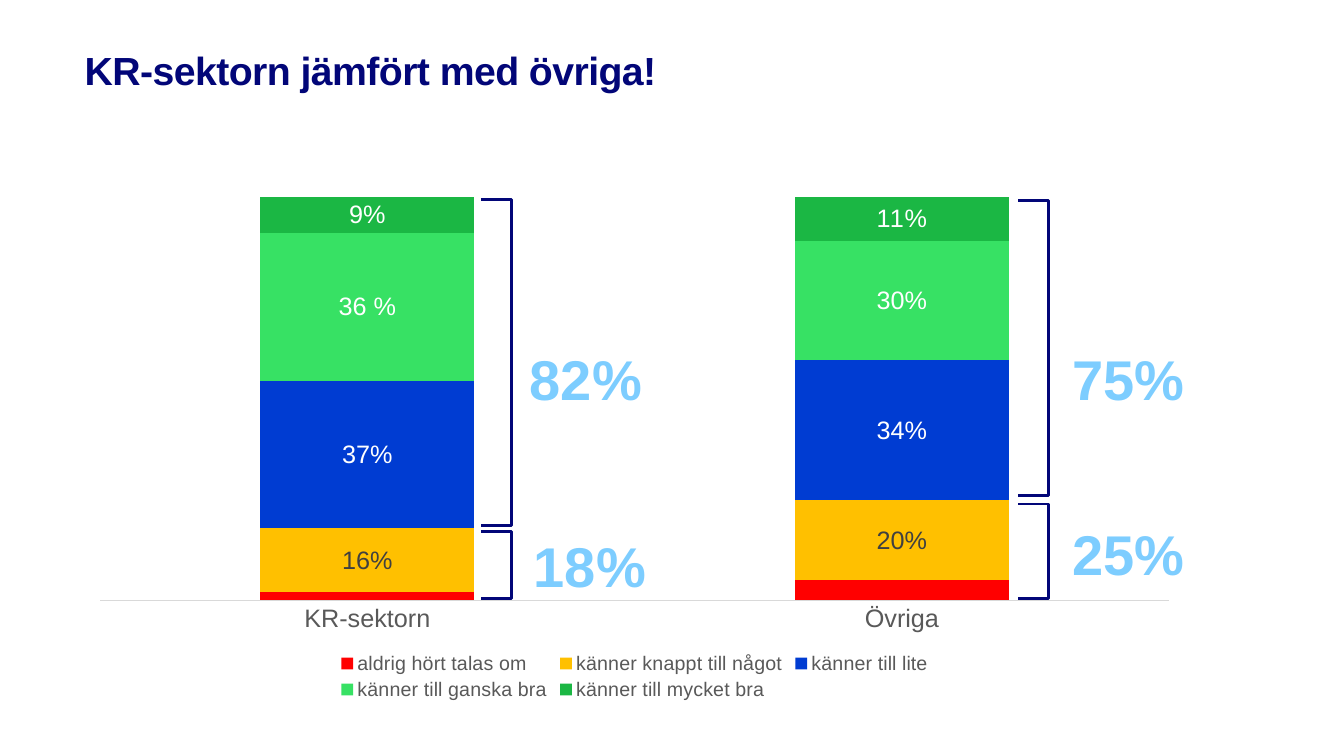
from lxml import etree
from pptx import Presentation
from pptx.chart.data import CategoryChartData
from pptx.dml.color import RGBColor
from pptx.enum.chart import XL_CHART_TYPE, XL_LABEL_POSITION, XL_LEGEND_POSITION, XL_TICK_MARK
from pptx.enum.shapes import MSO_SHAPE
from pptx.enum.text import MSO_ANCHOR, PP_ALIGN
from pptx.oxml.ns import qn
from pptx.util import Inches, Pt

STACKED = XL_CHART_TYPE.COLUMN_STACKED_100
LABEL_CENTER = XL_LABEL_POSITION.CENTER
LEGEND_BOTTOM = XL_LEGEND_POSITION.BOTTOM
NO_TICK = XL_TICK_MARK.NONE
BRACKET = MSO_SHAPE.RIGHT_BRACKET
TOP, MIDDLE = MSO_ANCHOR.TOP, MSO_ANCHOR.MIDDLE
LEFT, CENTER = PP_ALIGN.LEFT, PP_ALIGN.CENTER

FONT = "Arial"
NAVY, SKY, GREY, WHITE = "020678", "7DCDFF", "595959", "FFFFFF"
CATEGORIES = ["KR-sektorn", "Övriga"]
# name, values, fill, label colour, label wording by point
SERIES = [
    ("aldrig hört talas om", (0.02, 0.05), "FF0000", None, {}),
    ("känner knappt till något", (0.16, 0.20), "FFC000", "404040", {}),
    ("känner till lite", (0.37, 0.35), "003CD2", WHITE, {1: "34%"}),
    ("känner till ganska bra", (0.37, 0.30), "37E164", WHITE, {0: "36 %"}),
    ("känner till mycket bra", (0.09, 0.11), "1BB744", WHITE, {}),
]
PLOT_LAYOUT = {"layoutTarget": "inner", "xMode": "edge", "yMode": "edge",
               "x": 0.014, "y": 0.029, "w": 0.972, "h": 0.772}
# bracket box, total, box of the total
TOTALS = [
    ((4.77, 1.98, 0.3, 3.23), "82%", (5.11, 3.25, 1.4, 1)),
    ((4.77, 5.27, 0.3, 0.67), "18%", (5.15, 5.27, 1.4, 0.67)),
    ((10.1, 1.99, 0.3, 2.93), "75%", (10.49, 3.25, 1.4, 1)),
    ((10.1, 5, 0.3, 0.94), "25%", (10.49, 5.03, 1.4, 0.92)),
]


def color(value):
    return RGBColor.from_string(value)


def inches(box):
    return [Inches(length) for length in box]


def format_font(font, size, value, **extras):
    for name, setting in {"name": FONT, "size": Pt(size), **extras}.items():
        setattr(font, name, setting)
    font.color.rgb = color(value)


def add_text(slide, box, text, size, value, anchor=MIDDLE, align=CENTER, wrap=False):
    frame = slide.shapes.add_textbox(*inches(box)).text_frame
    settings = {"margin_left": 0, "margin_right": 0, "margin_top": 0, "margin_bottom": 0,
                "word_wrap": wrap, "vertical_anchor": anchor}
    for name, setting in settings.items():
        setattr(frame, name, setting)
    paragraph = frame.paragraphs[0]
    paragraph.alignment = align
    run = paragraph.add_run()
    run.text = text
    format_font(run.font, size, value, bold=True)
    return run


def add_title(slide, box):
    run = add_text(slide, box, "KR-sektorn jämfört med övriga!", 28, NAVY, TOP, LEFT, True)
    run.font._element.set("spc", "-40")


def label_series(series, label_color, wording):
    labels = series.data_labels
    settings = {"show_value": True, "position": LABEL_CENTER,
                "number_format": "0%", "number_format_is_linked": False}
    for name, setting in settings.items():
        setattr(labels, name, setting)
    format_font(labels.font, 18, label_color)
    for index, text in wording.items():
        label = series.points[index].data_label
        run = label.text_frame.paragraphs[0].add_run()
        run.text = text
        format_font(run.font, 18, label_color)
        label.position = LABEL_CENTER


def place_plot(chart):
    """Fix the inner plot area as fractions of the chart."""
    plot_area = chart._chartSpace.chart.plotArea
    for layout in plot_area.findall(qn("c:layout")):
        plot_area.remove(layout)
    layout = etree.Element(qn("c:layout"))
    manual = etree.SubElement(layout, qn("c:manualLayout"))
    for name, setting in PLOT_LAYOUT.items():
        etree.SubElement(manual, qn(f"c:{name}")).set("val", str(setting))
    plot_area.insert(0, layout)


def add_awareness_chart(slide, box):
    data = CategoryChartData(number_format="0%")
    data.categories = CATEGORIES
    for name, values, *_ in SERIES:
        data.add_series(name, values)
    chart = slide.shapes.add_chart(STACKED, *inches(box), data).chart
    chart.has_title = False
    format_font(chart.font, 10, "000000")

    plot = chart.plots[0]
    plot.gap_width, plot.overlap, plot.vary_by_categories = 150, 100, False
    for series, (_, _, fill, label_color, wording) in zip(plot.series, SERIES):
        series.format.fill.solid()
        series.format.fill.fore_color.rgb = color(fill)
        if label_color:
            label_series(series, label_color, wording)

    category_axis, value_axis = chart.category_axis, chart.value_axis
    category_axis.major_tick_mark = category_axis.minor_tick_mark = NO_TICK
    format_font(category_axis.tick_labels.font, 18, GREY)
    category_axis.format.line.color.rgb = color("D9D9D9")
    category_axis.format.line.width = Pt(0.75)
    value_axis.has_major_gridlines = False
    value_axis.minimum_scale, value_axis.maximum_scale = 0, 1
    value_axis.visible = False

    chart.has_legend = True
    chart.legend.position = LEGEND_BOTTOM
    chart.legend.include_in_layout = False
    format_font(chart.legend.font, 14, GREY)
    place_plot(chart)


def add_total(slide, bracket_box, text, text_box):
    bracket = slide.shapes.add_shape(BRACKET, *inches(bracket_box))
    bracket.adjustments[0] = 0
    bracket.shadow.inherit = False
    bracket.fill.background()
    bracket.line.color.rgb = color(NAVY)
    bracket.line.width = Pt(2)
    add_text(slide, text_box, text, 40, SKY)


def main():
    presentation = Presentation()
    presentation.slide_width, presentation.slide_height = inches((13.33, 7.5))
    slide = presentation.slides.add_slide(presentation.slide_layouts[6])
    add_awareness_chart(slide, (0.84, 1.8, 10.91, 5.19))
    add_title(slide, (0.84, 0.46, 10.92, 1.12))
    for total in TOTALS:
        add_total(slide, *total)
    presentation.save("out.pptx")


if __name__ == "__main__":
    main()
